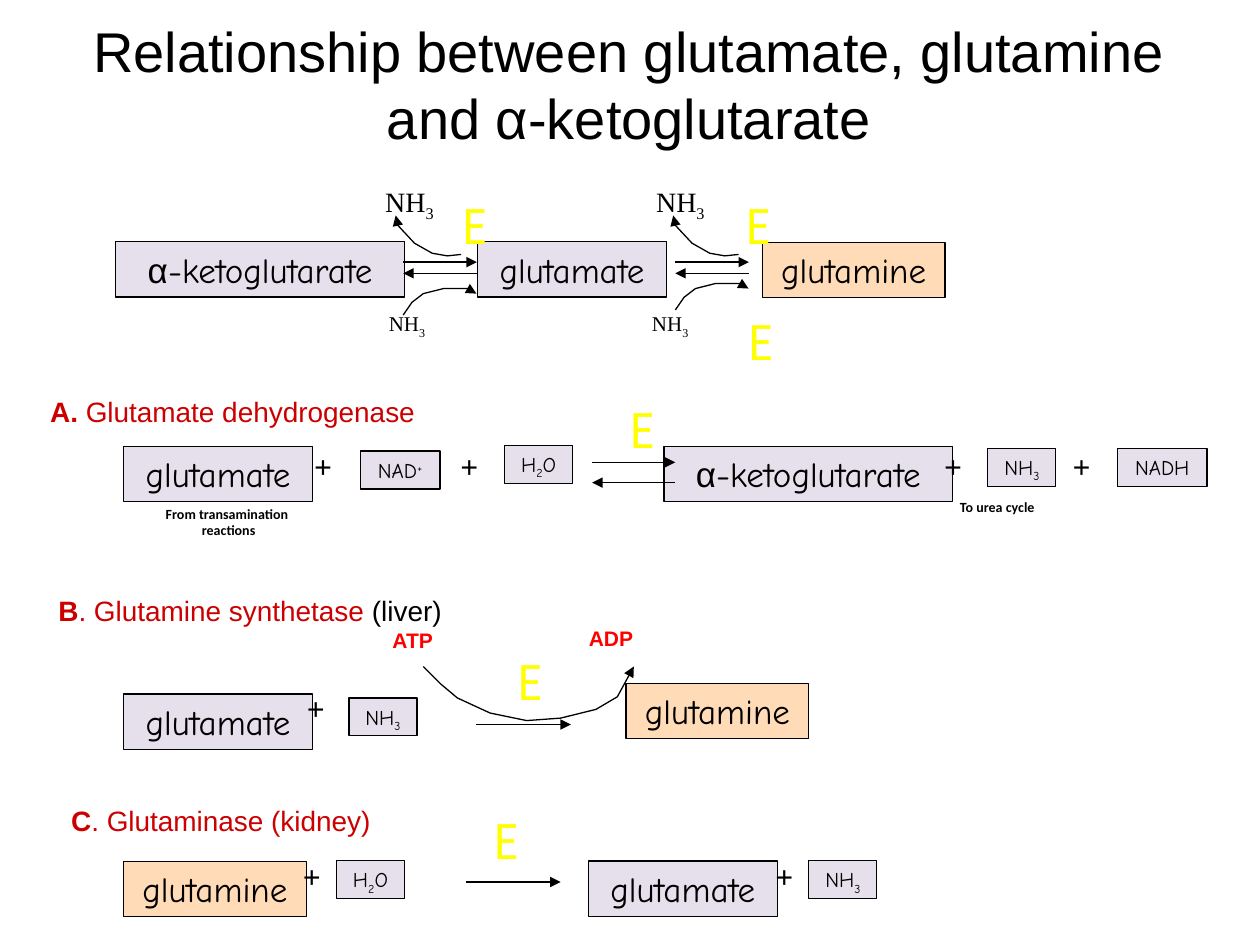
"""Build a slide relating glutamate, glutamine and α-ketoglutarate."""
import lxml.etree
import pptx
import pptx.dml.color
import pptx.enum.shapes
import pptx.enum.text
import pptx.oxml.ns
import pptx.util

Pt = pptx.util.Pt
qn = pptx.oxml.ns.qn
RGB = pptx.dml.color.RGBColor.from_string
ALIGN = pptx.enum.text.PP_ALIGN
FIT = pptx.enum.text.MSO_AUTO_SIZE

THEME = {
    "black": "000000", "lilac": "E6E0EC", "peach": "FFDBB7",
    "title": (32, "Arial", "000000", False),
    "heading": (16, "Arial", "CC0000", True),
    "large": (20, "Comic Neue", "000000", False),
    "small": (12, "Comic Neue", "000000", False),
    "gas in": (12, "Times New Roman", "000000", False),
    "gas out": (16, "Times New Roman", "000000", False),
    "plus": (18, "Times New Roman", "000000", True),
    "energy": (12, "Arial", "FF0000", True),
    "enzyme": (28, "Roboto Condensed", "FFFF00", False),
    "note": (8, "Calibri", "000000", True),
}

NH3 = [("NH", {}), ("3", {"base": -25})]
H2O = [("H", {}), ("2", {"base": -25}), ("O", {})]
NAD = [("NAD", {}), ("+", {"base": 30})]
NADH = [("NADH", {})]
KETO = [("α", {"font": "Arial"}), ("-ketoglutarate", {})]
GLU = [("glutamate", {})]
GLN = [("glutamine", {})]

prs = pptx.Presentation()
prs.slide_width, prs.slide_height = Pt(720), Pt(540)
s = prs.slides.add_slide(prs.slide_layouts[6])


def write(x, y, w, h, style, *lines, fill=None, wrap=False, align=ALIGN.CENTER):
    """Add a text box, or a bordered box when a fill is given."""
    box = [Pt(v) for v in (x, y, w, h)]
    if fill:
        sp = s.shapes.add_shape(pptx.enum.shapes.MSO_SHAPE.RECTANGLE, *box)
        sp.shadow.inherit = False
        sp.fill.solid()
        sp.fill.fore_color.rgb = RGB(THEME[fill])
        sp.line.color.rgb = RGB(THEME["black"])
        sp.line.width = Pt(0.75)
    else:
        sp = s.shapes.add_textbox(*box)
    tf = sp.text_frame
    tf.word_wrap = wrap
    tf.auto_size = FIT.NONE if style == "enzyme" else FIT.SHAPE_TO_FIT_TEXT
    tf.vertical_anchor = pptx.enum.text.MSO_ANCHOR.TOP
    size, font, color, bold = THEME[style]
    for i, runs in enumerate(lines):
        p = tf.add_paragraph() if i else tf.paragraphs[0]
        p.alignment = align
        p.font.size, p.font.name, p.font.bold = Pt(size), font, bold
        p.font.color.rgb = RGB(color)
        for text, own in runs:
            r = p.add_run()
            r.text = text
            if "font" in own:
                r.font.name = own["font"]
            if "color" in own:
                r.font.color.rgb = RGB(THEME[own["color"]])
            if "bold" in own:
                r.font.bold = own["bold"]
            if "base" in own:
                r._r.get_or_add_rPr().set("baseline", str(own["base"] * 1000))


def arrow(*points, end="tailEnd"):
    """Draw a line through the points with an arrowhead at one end."""
    points = [(Pt(x), Pt(y)) for x, y in points]
    if len(points) == 2:
        sp = s.shapes.add_connector(
            pptx.enum.shapes.MSO_CONNECTOR.STRAIGHT, *points[0], *points[1])
        lxml.etree.SubElement(sp._element.spPr, qn("a:effectLst"))
    else:
        outline = s.shapes.build_freeform(*points[0], scale=1.0)
        outline.add_line_segments(points[1:], close=False)
        sp = outline.convert_to_shape()
        sp.shadow.inherit = False
        sp.fill.background()
    sp.line.color.rgb = RGB(THEME["black"])
    sp.line.width = Pt(0.75)
    ln = sp._element.spPr.find(qn("a:ln"))
    lxml.etree.SubElement(ln, qn(f"a:{end}")).set("type", "triangle")


write(29.5, 5.8, 660, 84.2, "title",
      [("Relationship between glutamate, glutamine and α-ketoglutarate", {})], wrap=True)

WIDTHS = {"α-ketoglutarate": 165, "glutamate": 108, "glutamine": 104.4}
for x, y, runs in [
    (66.2, 138.2, KETO), (272.9, 138.2, GLU), (435.6, 138.5, GLN),
    (70.6, 255, GLU), (379.4, 255, KETO),
    (70.6, 396.5, GLU), (357.8, 390.5, GLN),
    (70.6, 492.3, GLN), (336.2, 492, GLU),
]:
    name = "".join(text for text, own in runs)
    write(x, y, WIDTHS[name], 31.6, "large", runs, fill="peach" if runs is GLN else "lilac")

for x, y, w, runs in [
    (205.9, 257.8, 45.6, NAD), (288.4, 254.6, 38.9, H2O),
    (564.5, 256.3, 38.9, NH3), (638.6, 256.3, 51.1, NADH),
    (199.4, 398.9, 38.9, NH3), (192.3, 491.8, 38.9, H2O), (462.2, 491.8, 38.9, NH3),
]:
    write(x, y, w, 21.6, "small", runs, fill="lilac")

for x, y in [(172, 252), (255.6, 252), (532, 252), (605.5, 252),
             (167.8, 390.2), (165.6, 486), (435.6, 486)]:
    write(x, y, 25.2, 28.8, "plus", [("+", {})])

for dx in (0, 155.5):
    arrow((230.4 + dx, 149.8), (272.5 + dx, 149.8))
    arrow((230.4 + dx, 156.2), (272.5 + dx, 156.2), end="headEnd")

for dx, dy in [(0, 0), (155.5, -2.9)]:
    arrow(*[(x + dx, y + dy) for x, y in [
        (230.4, 180), (235.4, 172.8), (241.9, 167.8),
        (253.4, 164.9), (267.8, 164.9), (272.2, 167.8)]])

for dx in (0, 158.6):
    arrow(*[(x + dx, y) for x, y in [
        (263.5, 145.4), (255.6, 146.2), (247, 144.7),
        (236.9, 139), (226.8, 128.2), (226.1, 123.1)]])

for x in (214.6, 365):
    write(x, 174.2, 36, 21.6, "gas in", NH3)
for x in (212.4, 367.2):
    write(x, 102.2, 43.2, 26.6, "gas out", NH3)

arrow((338.4, 264.2), (385.9, 264.2))
arrow((338.4, 275.8), (385.9, 275.8), end="headEnd")
arrow((272.2, 414), (326.2, 414))
arrow((266.4, 504), (320.4, 504))
arrow((241.9, 380.9), (252, 391), (261.4, 398.9), (280.1, 407.5), (301, 411.8),
      (320.4, 410.4), (340.6, 405.4), (352.8, 398.2), (362.2, 380.9))

write(216.7, 355, 38.2, 21.6, "energy", [("ATP", {})])
write(329, 353.8, 40.3, 21.6, "energy", [("ADP", {})])

for x, y in [(254.2, 108), (416.2, 108), (417.6, 174.2),
             (349.9, 224.6), (285.8, 368.6), (272.2, 459.4)]:
    write(x, y, 40.3, 27.4, "enzyme", [("E ", {})])

PLAIN = {"bold": False}
write(20.2, 221.8, 225.4, 26.6, "heading", [("A. ", {}), ("Glutamate dehydrogenase", PLAIN)])
write(24.5, 335.5, 241.2, 26.6, "heading",
      [("B", {}), (". Glutamine synthetase ", PLAIN), ("(liver) ", {"bold": False, "color": "black"})])
write(32.4, 455.8, 192.2, 26.6, "heading", [("C", {}), (". Glutaminase (kidney) ", PLAIN)])

write(87.1, 285.1, 87.1, 26.6, "note", [("From transamination ", {})], [("reactions", {})])
write(541.4, 281.5, 58.3, 17.3, "note", [("To urea cycle", {})], align=ALIGN.LEFT)

prs.save("out.pptx")
